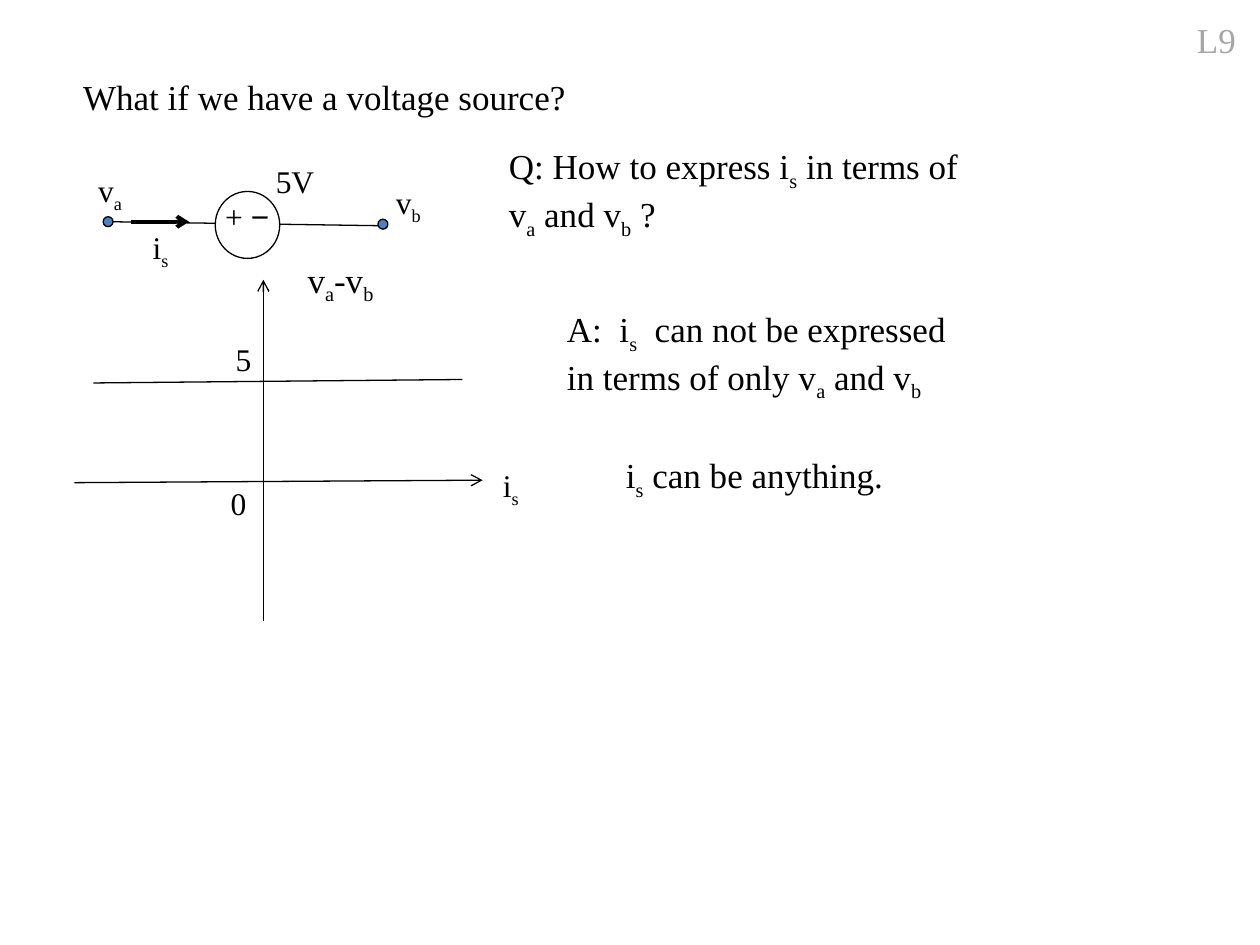
from typing import NamedTuple

import pptx
import pptx.dml.color
import pptx.enum.shapes
import pptx.enum.text
import pptx.oxml
import pptx.oxml.ns
import pptx.util
from pptx.util import Cm

COLORS = {"ink": "000000", "paper": "FFFFFF", "node": "4F81BD", "muted": "A6A6A6"}
SERIF = "Times New Roman"


class Label(NamedTuple):
    """Text in which every second part between underscores is a subscript."""
    text: str
    left: float
    top: float
    width: float
    height: float = 1.19
    size: int = 18
    color: str = "ink"


class Line(NamedTuple):
    x1: float
    y1: float
    x2: float
    y2: float
    weight: float = 0.75
    arrow: bool = False


class Circle(NamedTuple):
    left: float
    top: float
    width: float
    height: float
    fill: str


def rgb(name: str) -> pptx.dml.color.RGBColor:
    return pptx.dml.color.RGBColor.from_string(COLORS[name])


def write(frame, label: Label):
    """Fill a text frame with the label and return its paragraph."""
    frame.word_wrap = False
    frame.auto_size = pptx.enum.text.MSO_AUTO_SIZE.SHAPE_TO_FIT_TEXT
    frame.vertical_anchor = pptx.enum.text.MSO_ANCHOR.TOP
    paragraph = frame.paragraphs[0]
    paragraph.alignment = pptx.enum.text.PP_ALIGN.LEFT
    paragraph.font.name = SERIF
    paragraph.font.size = pptx.util.Pt(label.size)
    paragraph.font.color.rgb = rgb(label.color)
    for index, part in enumerate(label.text.split("_")):
        for row, piece in enumerate(part.split("\n")):
            if row:
                paragraph.add_line_break()
            if piece:
                run = paragraph.add_run()
                run.text = piece
                if index % 2:
                    run.font._element.set("baseline", "-25000")
    return paragraph


def draw_label(shapes, label: Label):
    box = shapes.add_textbox(Cm(label.left), Cm(label.top), Cm(label.width), Cm(label.height))
    return write(box.text_frame, label)


def draw_line(shapes, line: Line) -> None:
    connector = shapes.add_connector(
        pptx.enum.shapes.MSO_CONNECTOR.STRAIGHT,
        Cm(line.x1), Cm(line.y1), Cm(line.x2), Cm(line.y2))
    connector.line.color.rgb = rgb("ink")
    connector.line.width = pptx.util.Pt(line.weight)
    if line.arrow:
        connector.line._get_or_add_ln().append(pptx.oxml.parse_xml(
            f'<a:tailEnd {pptx.oxml.ns.nsdecls("a")} type="arrow"/>'))
    connector._element.spPr.append(pptx.oxml.parse_xml(
        f'<a:effectLst {pptx.oxml.ns.nsdecls("a")}/>'))


def draw_circle(shapes, circle: Circle) -> None:
    oval = shapes.add_shape(
        pptx.enum.shapes.MSO_SHAPE.OVAL,
        Cm(circle.left), Cm(circle.top), Cm(circle.width), Cm(circle.height))
    oval.shadow.inherit = False
    oval.fill.solid()
    oval.fill.fore_color.rgb = rgb(circle.fill)
    oval.line.color.rgb = rgb("ink")
    oval.line.width = pptx.util.Pt(0.75)


def draw_circuit(shapes) -> None:
    draw_line(shapes, Line(2.26, 4.47, 7.65, 4.55))
    draw_circle(shapes, Circle(4.34, 3.86, 1.3, 1.35, "paper"))
    polarity = draw_label(shapes, Label("+ ", 4.29, 3.84, 1.57))
    minus = polarity.add_run()
    minus.text = "−"
    minus.font.name = "Arial"
    for left, top in ((2.08, 4.37), (7.62, 4.42)):
        draw_circle(shapes, Circle(left, top, 0.2, 0.2, "node"))
    draw_line(shapes, Line(2.64, 4.47, 3.81, 4.47, 2.25, True))
    for label in (
        Label("5V", 5.31, 3.15, 1.47),
        Label("i_s", 2.83, 4.47, 0.98),
        Label("v_a", 1.73, 3.33, 1.16),
        Label("v_b", 7.73, 3.56, 1.21),
    ):
        draw_label(shapes, label)


def draw_graph(shapes) -> None:
    for line in (
        Line(1.5, 9.73, 9.73, 9.68, arrow=True),
        Line(5.31, 12.52, 5.31, 5.64, arrow=True),
        Line(1.88, 7.72, 9.32, 7.65),
    ):
        draw_line(shapes, line)
    for label in (
        Label("i_s", 9.89, 9.27, 0.98),
        Label("v_a_-v_b", 5.95, 5.08, 1.9, 1.12, 20),
        Label("5", 4.5, 6.73, 0.93),
        Label("0", 4.4, 9.63, 0.98),
    ):
        draw_label(shapes, label)


def main() -> None:
    deck = pptx.Presentation()
    deck.slide_width, deck.slide_height = Cm(25.4), Cm(19.05)
    slide = deck.slides.add_slide(deck.slide_layouts[5])

    heading = Label("What if we have a voltage source?", 1.42, 1.4, 10.49, 1.12, 20)
    title = slide.shapes.title
    title.left, title.top = Cm(heading.left), Cm(heading.top)
    title.width, title.height = Cm(heading.width), Cm(heading.height)
    write(title.text_frame, heading)

    draw_circuit(slide.shapes.add_group_shape().shapes)
    draw_graph(slide.shapes.add_group_shape().shapes)
    for label in (
        Label("L9", 23.88, 0.25, 1.3, 1.12, 20, "muted"),
        Label("Q: How to express i_s_ in terms of \nv_a_ and v_b_ ?", 10.01, 2.79, 9.83, 1.96, 20),
        Label("A:  i_s_  can not be expressed \nin terms of only v_a_ and v_b",
              11.18, 6.07, 8.41, 1.96, 20),
        Label("i_s_ can be anything.", 12.37, 9.02, 5.94, 1.12, 20),
    ):
        draw_label(slide.shapes, label)
    deck.save("out.pptx")


if __name__ == "__main__":
    main()
